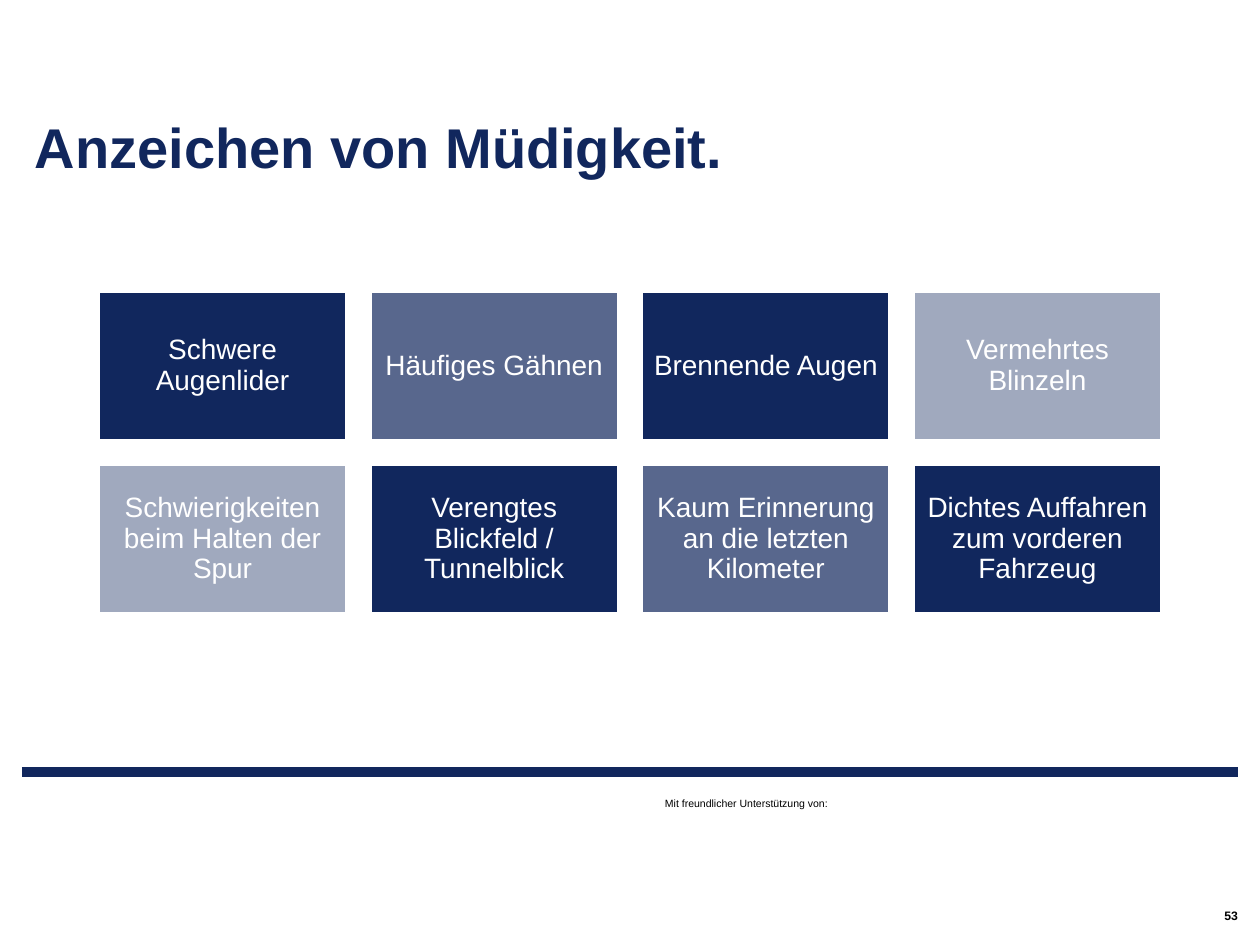
from dataclasses import dataclass
from typing import Any

from lxml.etree import SubElement
from pptx import Presentation
from pptx.dml.color import RGBColor
from pptx.enum.shapes import MSO_CONNECTOR as Connector, MSO_SHAPE as Shape
from pptx.enum.text import MSO_ANCHOR as Anchor, MSO_AUTO_SIZE as AutoSize, PP_ALIGN as Align
from pptx.oxml.ns import qn
from pptx.util import Emu, Pt

NAVY, SLATE, MIST = "11275D", "58678D", "A0A9BE"
WHITE, BLACK = "FFFFFF", "000000"
SIGNS = [
    [
        ("Schwere Augenlider", NAVY),
        ("Häufiges Gähnen", SLATE),
        ("Brennende Augen", NAVY),
        ("Vermehrtes Blinzeln", MIST),
    ],
    [
        ("Schwierigkeiten beim Halten der Spur", MIST),
        ("Verengtes Blickfeld /\nTunnelblick", NAVY),
        ("Kaum Erinnerung an die letzten Kilometer", SLATE),
        ("Dichtes Auffahren zum vorderen Fahrzeug", NAVY),
    ],
]


def px(length):
    return Emu(round(length * 914400 / 126))


def color(value):
    return RGBColor.from_string(value)


@dataclass
class Builder:
    page: Any
    font: str = "Arial"

    def set_text(self, box, text, size, ink, bold=False, align=Align.LEFT,
                 anchor=Anchor.TOP, margins=(13, 6), spacing=1.0):
        frame = box.text_frame
        frame.word_wrap = True
        frame.auto_size = AutoSize.NONE
        frame.vertical_anchor = anchor
        frame.margin_left = frame.margin_right = px(margins[0])
        frame.margin_top = frame.margin_bottom = px(margins[1])
        para = frame.paragraphs[0]
        para.text = text
        para.alignment = align
        para.line_spacing = spacing
        para.font.name = self.font
        para.font.size = Pt(size)
        para.font.bold = bold
        para.font.color.rgb = color(ink)

    def title(self, text, left, top, width, height):
        box = self.page.shapes.title
        box.left, box.top, box.width, box.height = map(px, (left, top, width, height))
        self.set_text(box, text, 32, NAVY, bold=True, anchor=Anchor.BOTTOM,
                      margins=(13, 0), spacing=0.9)

    def label(self, text, left, top, width, height, size, **style):
        box = self.page.shapes.add_textbox(*map(px, (left, top, width, height)))
        self.set_text(box, text, size, BLACK, **style)

    def tile(self, text, fill, left, top, width, height):
        box = self.page.shapes.add_shape(
            Shape.RECTANGLE, *map(px, (left, top, width, height)))
        box.shadow.inherit = False
        box.fill.solid()
        box.fill.fore_color.rgb = color(fill)
        box.line.color.rgb = color(WHITE)
        box.line.width = Pt(1)
        self.set_text(box, text, 16, WHITE, align=Align.CENTER,
                      anchor=Anchor.MIDDLE, margins=(9, 9), spacing=0.9)

    def rule(self, left, right, y, width):
        line = self.page.shapes.add_connector(
            Connector.STRAIGHT, px(left), px(y), px(right), px(y))
        line.line.color.rgb = color(NAVY)
        line.line.width = Pt(width)
        SubElement(line._element.spPr, qn("a:effectLst"))


def main():
    deck = Presentation()
    deck.slide_width, deck.slide_height = px(1260), px(945)
    builder = Builder(deck.slides.add_slide(deck.slide_layouts[5]))

    builder.rule(22, 1238, 772, 5.67)
    builder.label("Mit freundlicher Unterstützung von:", 652, 791, 256, 25, 6)
    builder.title("Anzeichen von Müdigkeit.", 22, 49, 1216, 132)

    left, right, top = 99, 1161, 292
    width, height, gap = 247, 148, 25
    pitch = (right - left - width) / 3
    for row, signs in enumerate(SIGNS):
        for column, (text, fill) in enumerate(signs):
            builder.tile(text, fill, left + column * pitch,
                         top + row * (height + gap), width, height)

    builder.label("53", 812, 906, 426, 20, 7, bold=True, align=Align.RIGHT,
                  anchor=Anchor.MIDDLE, margins=(0, 0))
    deck.save("out.pptx")


if __name__ == "__main__":
    main()
